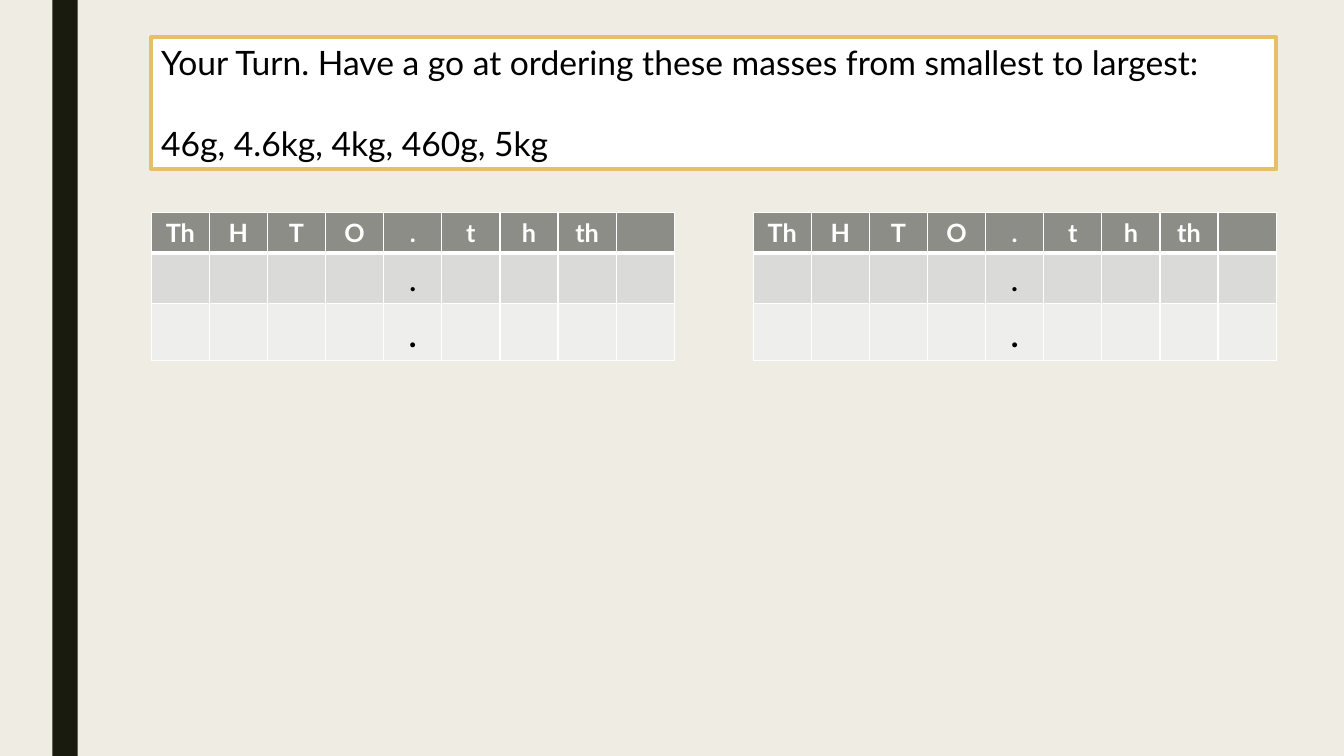
from dataclasses import dataclass

from lxml import etree
from pptx import Presentation
from pptx.dml.color import RGBColor
from pptx.enum.shapes import MSO_SHAPE
from pptx.enum.text import MSO_ANCHOR, MSO_AUTO_SIZE, PP_ALIGN
from pptx.oxml.ns import qn
from pptx.util import Inches, Pt

RECTANGLE = MSO_SHAPE.RECTANGLE
TOP = MSO_ANCHOR.TOP
GROW = MSO_AUTO_SIZE.SHAPE_TO_FIT_TEXT
LEFT, CENTER = PP_ALIGN.LEFT, PP_ALIGN.CENTER

TASK = [
    "Your Turn. Have a go at ordering these masses from smallest to largest:",
    "46g, 4.6kg, 4kg, 460g, 5kg",
]
PLACE_VALUES = ["Th", "H", "T", "O", ".", "t", "h", "th", ""]
POINT_ROW = [value if value == "." else "" for value in PLACE_VALUES]
GRID = [PLACE_VALUES, POINT_ROW, POINT_ROW]


@dataclass(frozen=True)
class Theme:
    font: str = "Lato"
    background: str = "EFEDE3"
    bar: str = "191B0E"
    white: str = "FFFFFF"
    black: str = "000000"
    gold: str = "E6C069"
    row_fills: tuple = ("8C8D86", "DADBD9", "EEEEED")
    row_sizes: tuple = (18, 24, 28)
    task_size: int = 24
    task_line: float = 2.75
    thin: int = 1
    thick: int = 3


THEME = Theme()
WIDTH, HEIGHT = 13.33, 7.5
MARGIN, CONTENT_WIDTH = 1.5, 11.16
BAR_LEFT, BAR_WIDTH = 0.52, 0.25
TASK_TOP, TASK_HEIGHT = 0.37, 1.31
TABLE_TOP, TABLE_WIDTH, TABLE_HEIGHT = 2.11, 5.19, 1.47
ROW_HEIGHTS = (0.37, 0.46, 0.52)
TABLE_LEFTS = (MARGIN, MARGIN + CONTENT_WIDTH - TABLE_WIDTH)


def paint(fill, color):
    fill.solid()
    fill.fore_color.rgb = RGBColor.from_string(color)


def add_text(paragraph, text, size, color, alignment, bold=False):
    paragraph.alignment = alignment
    run = paragraph.add_run()
    run.text = text
    run.font.name = THEME.font
    run.font.size = Pt(size)
    run.font.bold = bold
    run.font.color.rgb = RGBColor.from_string(color)


def add_rectangle(slide, left, top, width, height, color):
    shape = slide.shapes.add_shape(
        RECTANGLE, Inches(left), Inches(top), Inches(width), Inches(height)
    )
    shape.shadow.inherit = False
    paint(shape.fill, color)
    shape.line.fill.background()
    return shape


def add_task(slide):
    box = add_rectangle(
        slide, MARGIN, TASK_TOP, CONTENT_WIDTH, TASK_HEIGHT, THEME.white
    )
    paint(box.line.fill, THEME.gold)
    box.line.width = Pt(THEME.task_line)
    frame = box.text_frame
    frame.word_wrap = True
    frame.auto_size = GROW
    frame.vertical_anchor = TOP
    for index, text in enumerate(TASK):
        paragraph = frame.add_paragraph() if index else frame.paragraphs[0]
        paragraph.space_before = Pt(1.2 * THEME.task_size * index)
        add_text(paragraph, text, THEME.task_size, THEME.black, LEFT)


def add_borders(cell, top, bottom):
    properties = cell._tc.get_or_add_tcPr()
    sides = {"lnL": THEME.thin, "lnR": THEME.thin, "lnT": top, "lnB": bottom}
    for index, (side, width) in enumerate(sides.items()):
        line = etree.Element(qn(f"a:{side}"), w=str(Pt(width)))
        fill = etree.SubElement(line, qn("a:solidFill"))
        etree.SubElement(fill, qn("a:srgbClr"), val=THEME.white)
        properties.insert(index, line)


def add_place_value_table(slide, left):
    frame = slide.shapes.add_table(
        len(GRID), len(PLACE_VALUES), Inches(left), Inches(TABLE_TOP),
        Inches(TABLE_WIDTH), Inches(TABLE_HEIGHT),
    )
    table = frame.table
    table.horz_banding = False
    for column in table.columns:
        column.width = Inches(TABLE_WIDTH / len(PLACE_VALUES))
    for row_index, values in enumerate(GRID):
        header = row_index == 0
        table.rows[row_index].height = Inches(ROW_HEIGHTS[row_index])
        color = THEME.white if header else THEME.black
        top = THEME.thick if row_index == 1 else THEME.thin
        bottom = THEME.thick if header else THEME.thin
        for column_index, value in enumerate(values):
            cell = table.cell(row_index, column_index)
            paint(cell.fill, THEME.row_fills[row_index])
            add_borders(cell, top, bottom)
            if value:
                add_text(
                    cell.text_frame.paragraphs[0], value,
                    THEME.row_sizes[row_index], color, CENTER, header,
                )
    frame.height = Inches(TABLE_HEIGHT)


def main():
    presentation = Presentation()
    presentation.slide_width = Inches(WIDTH)
    presentation.slide_height = Inches(HEIGHT)
    slide = presentation.slides.add_slide(presentation.slide_layouts[6])
    paint(slide.background.fill, THEME.background)
    add_rectangle(slide, BAR_LEFT, 0, BAR_WIDTH, HEIGHT, THEME.bar)
    add_task(slide)
    for left in TABLE_LEFTS:
        add_place_value_table(slide, left)
    presentation.save("out.pptx")


if __name__ == "__main__":
    main()
